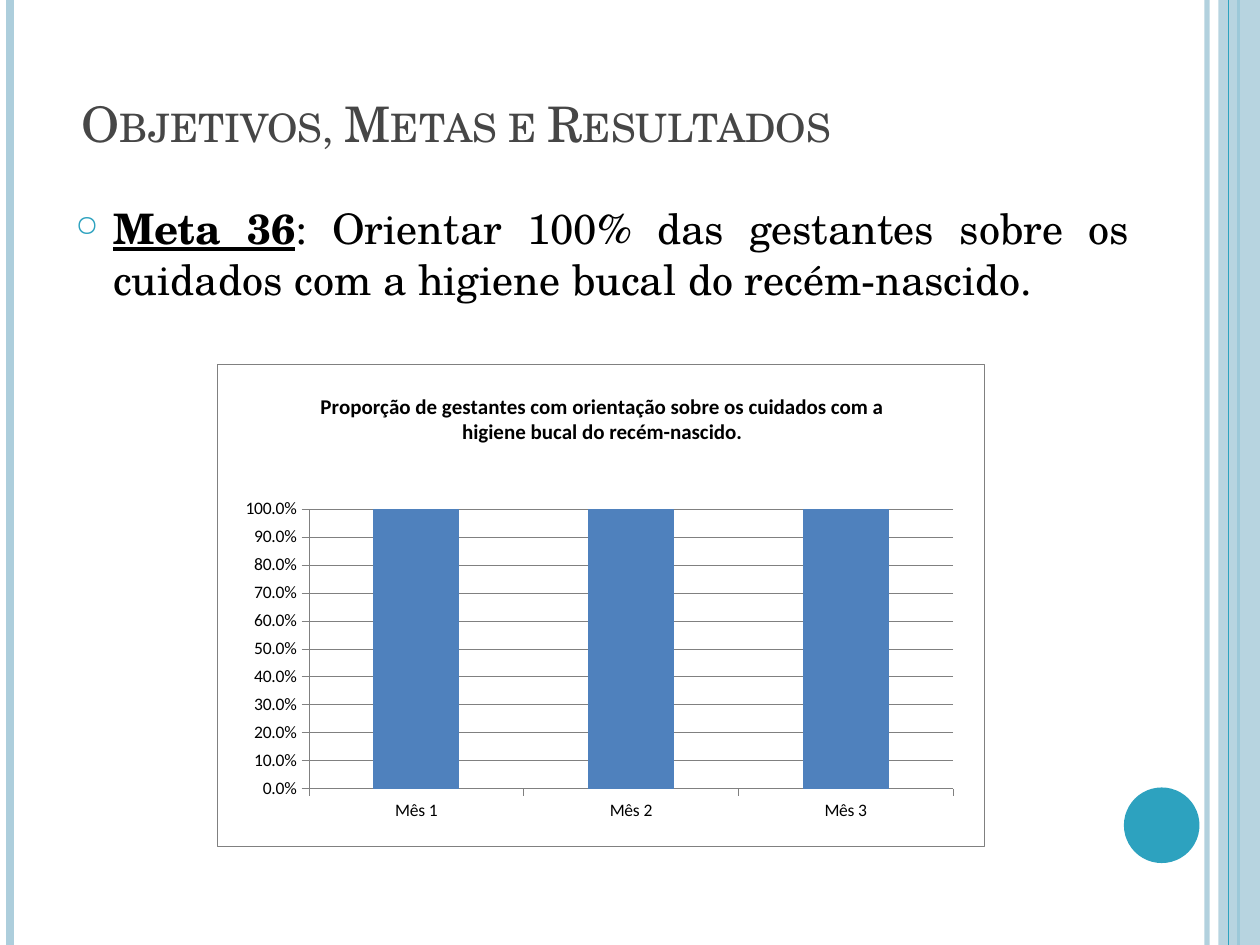
from typing import NamedTuple

from lxml.etree import SubElement
from pptx import Presentation
from pptx.chart.data import CategoryChartData
from pptx.dml.color import RGBColor
from pptx.enum.chart import XL_CHART_TYPE, XL_TICK_MARK
from pptx.enum.shapes import MSO_CONNECTOR, MSO_SHAPE
from pptx.enum.text import MSO_ANCHOR, PP_ALIGN
from pptx.oxml import parse_xml
from pptx.oxml.ns import nsdecls, qn
from pptx.util import Inches, Pt

BLACK = RGBColor(0x00, 0x00, 0x00)
WHITE = RGBColor(0xFF, 0xFF, 0xFF)
GRAY = RGBColor(0x80, 0x80, 0x80)
TITLE_GRAY = RGBColor(0x46, 0x46, 0x46)
TEAL = RGBColor(0x2D, 0xA2, 0xBF)
PALE_TEAL = RGBColor(0xAD, 0xCE, 0xDC)
BAR_BLUE = RGBColor(0x4F, 0x81, 0xBD)
SLIDE_FONT = "TeX Gyre Schola"
CHART_FONT = "Calibri"
SLIDE_HEIGHT = 7.5
CHART_TITLE = (
    "Proporção de gestantes com orientação sobre os cuidados com a "
    "higiene bucal do recém-nascido."
)


class Stripe(NamedTuple):
    x: float
    weight: float
    color: RGBColor
    opacity: int = 100


class Panel(NamedTuple):
    preset: MSO_SHAPE
    left: float
    top: float
    width: float
    height: float
    color: RGBColor
    opacity: int = 100


DECORATIONS = (
    Stripe(9.58, 3, PALE_TEAL, 93),
    Stripe(0.08, 4.5, PALE_TEAL),
    Stripe(9.83, 1.5, TEAL),
    Panel(MSO_SHAPE.RECTANGLE, 9.67, 0, 0.33, SLIDE_HEIGHT, PALE_TEAL, 87),
    Stripe(9.75, 0.75, TEAL),
    Panel(MSO_SHAPE.OVAL, 8.92, 6.25, 0.6, 0.6, TEAL),
)


def set_opacity(parent, percent: int) -> None:
    if percent < 100:
        color = next(parent.iter(qn("a:srgbClr")))
        SubElement(color, qn("a:alpha"), val=str(percent * 1000))


def draw_stripe(slide, stripe: Stripe) -> None:
    connector = slide.shapes.add_connector(
        MSO_CONNECTOR.STRAIGHT,
        Inches(stripe.x), 0, Inches(stripe.x), Inches(SLIDE_HEIGHT),
    )
    connector.line.color.rgb = stripe.color
    connector.line.width = Pt(stripe.weight)
    properties = connector._element.spPr
    set_opacity(properties, stripe.opacity)
    SubElement(properties, qn("a:effectLst"))


def draw_panel(slide, panel: Panel) -> None:
    shape = slide.shapes.add_shape(
        panel.preset, Inches(panel.left), Inches(panel.top),
        Inches(panel.width), Inches(panel.height),
    )
    shape.shadow.inherit = False
    shape.fill.solid()
    shape.fill.fore_color.rgb = panel.color
    shape.line.fill.background()
    set_opacity(shape._element.spPr, panel.opacity)


def style_font(font, name: str, size: float, color: RGBColor, bold: bool = False) -> None:
    font.name = name
    font.size = Pt(size)
    font.color.rgb = color
    font.bold = bold


def write_title(slide) -> None:
    title = slide.shapes.title
    title.left, title.top = Inches(0.55), Inches(0.62)
    title.width, title.height = Inches(8.17), Inches(0.64)
    title.text_frame.vertical_anchor = MSO_ANCHOR.BOTTOM
    paragraph = title.text_frame.paragraphs[0]
    paragraph.alignment = PP_ALIGN.LEFT
    run = paragraph.add_run()
    run.text = "Objetivos, Metas e Resultados"
    style_font(run.font, SLIDE_FONT, 28, TITLE_GRAY)
    run.font._element.set("cap", "small")


def write_goal(slide) -> None:
    goal = slide.shapes.add_textbox(Inches(0.5), Inches(1.56), Inches(8.56), Inches(1.1))
    goal.text_frame.word_wrap = True
    paragraph = goal.text_frame.paragraphs[0]
    paragraph.alignment = PP_ALIGN.JUSTIFY
    paragraph.space_before = Pt(6)
    properties = paragraph._p.get_or_add_pPr()
    properties.set("marL", str(Inches(0.3)))
    properties.set("indent", str(Inches(-0.3)))
    bullet_color = SubElement(properties, qn("a:buClr"))
    SubElement(bullet_color, qn("a:srgbClr"), val=str(TEAL))
    SubElement(properties, qn("a:buSzPct"), val="70000")
    SubElement(properties, qn("a:buChar"), char="○")
    for text, is_label in (
        ("Meta 36", True),
        (": Orientar 100% das gestantes sobre os cuidados com a higiene bucal "
         "do recém-nascido.", False),
    ):
        run = paragraph.add_run()
        run.text = text
        style_font(run.font, SLIDE_FONT, 24, BLACK, bold=is_label)
        run.font.underline = is_label


def manual_layout(x: float, y: float, width: float = 0, height: float = 0):
    """Chart layout in fractions of the chart; a size marks the inner plot area."""
    target = '<c:layoutTarget val="inner"/>' if width else ""
    size = f'<c:w val="{width}"/><c:h val="{height}"/>' if width else ""
    return parse_xml(
        f'<c:layout {nsdecls("c")}><c:manualLayout>{target}'
        f'<c:xMode val="edge"/><c:yMode val="edge"/>'
        f'<c:x val="{x}"/><c:y val="{y}"/>{size}</c:manualLayout></c:layout>'
    )


def replace_layout(parent, layout, index: int) -> None:
    for old in parent.findall(qn("c:layout")):
        parent.remove(old)
    parent.insert(index, layout)


def style_line(line) -> None:
    line.color.rgb = GRAY
    line.width = Pt(0.25)


def frame_chart(chart) -> None:
    """Give the chart and plot areas a white fill, and the chart a thin border."""
    fill = f'<a:solidFill><a:srgbClr val="{WHITE}"/></a:solidFill>'
    border = (f'<a:ln w="{Pt(0.25)}"><a:solidFill><a:srgbClr val="{GRAY}"/>'
              "</a:solidFill></a:ln>")
    opening = f'<c:spPr {nsdecls("c", "a")}>{fill}'
    chart_node = chart._chartSpace.chart
    chart_node.addnext(parse_xml(f"{opening}{border}</c:spPr>"))
    chart_node.plotArea.append(parse_xml(f"{opening}</c:spPr>"))


def draw_chart(slide) -> None:
    data = CategoryChartData(number_format="0.0%")
    data.categories = [f"Mês {month}" for month in range(1, 4)]
    data.add_series(CHART_TITLE, (1, 1, 1))
    chart = slide.shapes.add_chart(
        XL_CHART_TYPE.COLUMN_CLUSTERED,
        Inches(1.72), Inches(2.89), Inches(6.09), Inches(3.83), data,
    ).chart
    style_font(chart.font, CHART_FONT, 10, BLACK)
    chart.has_legend = False
    chart.has_title = True
    run = chart.chart_title.text_frame.paragraphs[0].add_run()
    run.text = CHART_TITLE
    style_font(run.font, CHART_FONT, 12, BLACK, bold=True)

    plot = chart.plots[0]
    plot.vary_by_categories = False
    plot.gap_width = 150
    bars = plot.series[0].format.fill
    bars.solid()
    bars.fore_color.rgb = BAR_BLUE

    for axis in (chart.category_axis, chart.value_axis):
        axis.major_tick_mark = XL_TICK_MARK.OUTSIDE
        style_font(axis.tick_labels.font, CHART_FONT, 10, BLACK)
        style_line(axis.format.line)
    values = chart.value_axis
    values.minimum_scale, values.maximum_scale, values.major_unit = 0, 1, 0.1
    values.tick_labels.number_format = "0.0%"
    values.tick_labels.number_format_is_linked = False
    style_line(values.major_gridlines.format.line)

    replace_layout(chart.chart_title._element, manual_layout(0.13, 0.05), 1)
    replace_layout(chart._chartSpace.chart.plotArea,
                   manual_layout(0.12, 0.3, 0.84, 0.58), 0)
    frame_chart(chart)


def main() -> None:
    presentation = Presentation()
    presentation.slide_width = Inches(10)
    presentation.slide_height = Inches(SLIDE_HEIGHT)
    slide = presentation.slides.add_slide(presentation.slide_layouts[5])
    for part in DECORATIONS:
        if isinstance(part, Stripe):
            draw_stripe(slide, part)
        else:
            draw_panel(slide, part)
    write_goal(slide)
    write_title(slide)
    draw_chart(slide)
    presentation.save("out.pptx")


if __name__ == "__main__":
    main()
